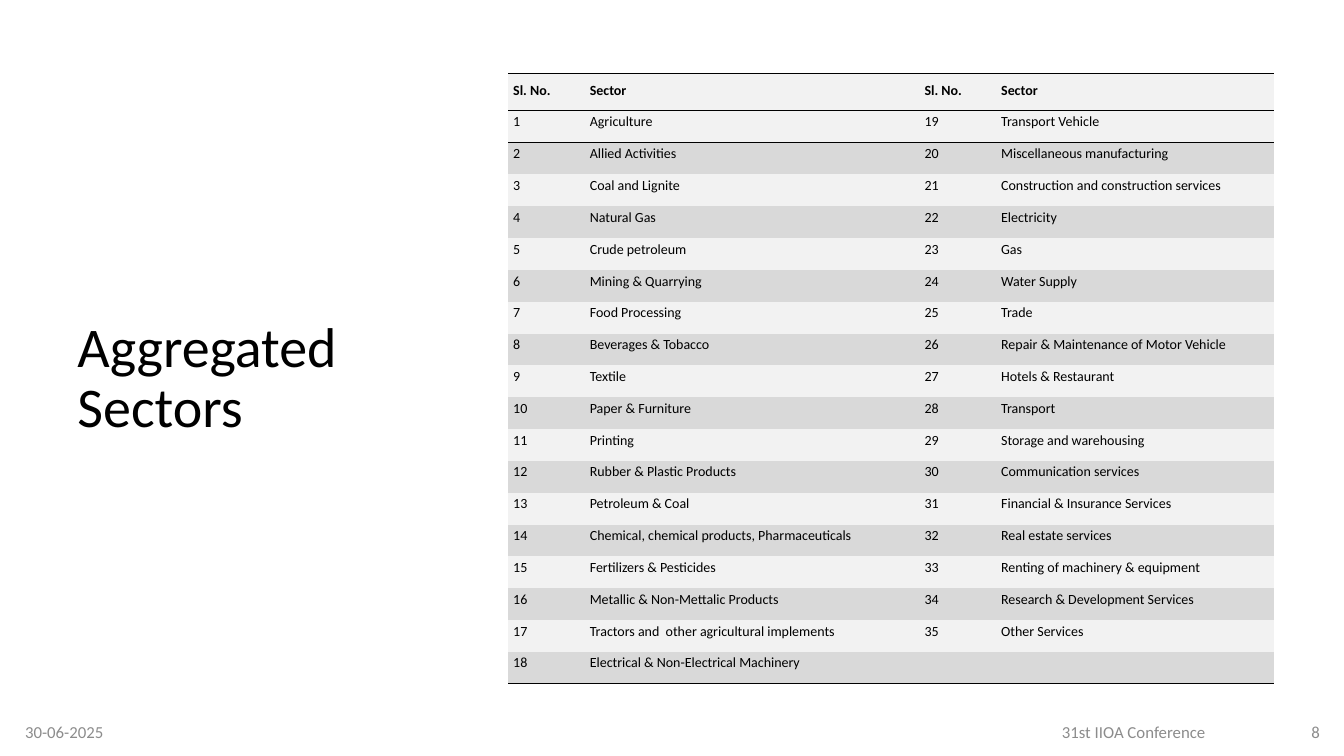
import pptx
import pptx.dml.color
import pptx.enum.text
import pptx.oxml
import pptx.oxml.ns
import pptx.util
from pptx.util import Inches

BLACK = pptx.dml.color.RGBColor(0x00, 0x00, 0x00)
FOOTER_GREY = pptx.dml.color.RGBColor(0x8C, 0x8C, 0x8C)
LIGHT_BAND = pptx.dml.color.RGBColor(0xF2, 0xF2, 0xF2)
DARK_BAND = pptx.dml.color.RGBColor(0xD9, 0xD9, 0xD9)

FONT = "Calibri"
PLAIN_TABLE_STYLE = "{2D5ABB26-0587-4C30-8999-92F81FD0307C}"
ALIGN = pptx.enum.text.PP_ALIGN
ANCHOR = pptx.enum.text.MSO_ANCHOR

COLUMN_WIDTHS = (0.76, 3.32, 0.76, 2.76)
HEADER_HEIGHT = 0.37
TABLE_HEIGHT = 6.06
TABLE_FONT_SIZE = 10

SECTORS = [
    "Agriculture",
    "Allied Activities",
    "Coal and Lignite",
    "Natural Gas",
    "Crude petroleum",
    "Mining & Quarrying",
    "Food Processing",
    "Beverages & Tobacco",
    "Textile",
    "Paper & Furniture",
    "Printing",
    "Rubber & Plastic Products",
    "Petroleum & Coal",
    "Chemical, chemical products, Pharmaceuticals",
    "Fertilizers & Pesticides",
    "Metallic & Non-Mettalic Products",
    "Tractors and  other agricultural implements",
    "Electrical & Non-Electrical Machinery",
    "Transport Vehicle",
    "Miscellaneous manufacturing",
    "Construction and construction services",
    "Electricity",
    "Gas",
    "Water Supply",
    "Trade",
    "Repair & Maintenance of Motor Vehicle",
    "Hotels & Restaurant",
    "Transport",
    "Storage and warehousing",
    "Communication services",
    "Financial & Insurance Services",
    "Real estate services",
    "Renting of machinery & equipment",
    "Research & Development Services",
    "Other Services",
]


def style_font(font, size, color, bold=False):
    font.name = FONT
    font.size = pptx.util.Pt(size)
    font.color.rgb = color
    font.bold = bold


def add_text(slide, text, left, top, width, height, size, color, align=ALIGN.LEFT):
    """Add a vertically centred text box and return its paragraph."""
    box = slide.shapes.add_textbox(
        Inches(left), Inches(top), Inches(width), Inches(height))
    frame = box.text_frame
    frame.word_wrap = True
    frame.vertical_anchor = ANCHOR.MIDDLE
    paragraph = frame.paragraphs[0]
    paragraph.text = text
    paragraph.alignment = align
    style_font(paragraph.font, size, color)
    return paragraph


def add_footer(slide, text, left, width, align):
    paragraph = add_text(slide, text, left, 7.06, width, 0.4, 12, FOOTER_GREY, align)
    paragraph.space_after = pptx.util.Pt(6)


def add_border(cell, side):
    """Rule one side of a cell: "T" for top or "B" for bottom, before its fill."""
    cell._tc.get_or_add_tcPr().append(pptx.oxml.parse_xml(
        f'<a:ln{side} {pptx.oxml.ns.nsdecls("a")} w="{pptx.util.Pt(1)}">'
        f'<a:solidFill><a:srgbClr val="{BLACK}"/></a:solidFill></a:ln{side}>'))


def fill_cell(cell, text, band, bold, borders):
    for side in borders:
        add_border(cell, side)
    cell.fill.solid()
    cell.fill.fore_color.rgb = band
    cell.vertical_anchor = ANCHOR.BOTTOM
    cell.margin_left = Inches(0.05)
    cell.margin_top = Inches(0.02)
    cell.margin_right = Inches(0.01)
    cell.margin_bottom = Inches(0.12)
    paragraph = cell.text_frame.paragraphs[0]
    style_font(paragraph.font, TABLE_FONT_SIZE, BLACK, bold)
    if text:
        paragraph.text = text
    else:
        # An empty cell takes its line height from the end mark.
        end_mark = paragraph._p.get_or_add_endParaRPr()
        end_mark.set("sz", str(TABLE_FONT_SIZE * 100))


def sector_rows():
    """Number the sectors and lay them out in two halves, side by side."""
    numbered = [(str(number), name) for number, name in enumerate(SECTORS, 1)]
    half = (len(numbered) + 1) // 2
    right = numbered[half:] + [("", "")] * (2 * half - len(numbered))
    return [first + second for first, second in zip(numbered[:half], right)]


def add_sector_table(slide):
    rows = [("Sl. No.", "Sector") * 2] + sector_rows()
    last = len(rows) - 1
    table = slide.shapes.add_table(
        len(rows), len(COLUMN_WIDTHS), Inches(5.04), Inches(0.73),
        Inches(sum(COLUMN_WIDTHS)), Inches(TABLE_HEIGHT)).table
    table.first_row = False
    table.horz_banding = False
    table._tbl.tblPr[0].text = PLAIN_TABLE_STYLE
    for column, width in zip(table.columns, COLUMN_WIDTHS):
        column.width = Inches(width)

    row_height = (TABLE_HEIGHT - HEADER_HEIGHT) / last
    borders = {0: "TB", 1: "T", last: "B"}
    for index, values in enumerate(rows):
        is_header = index == 0
        table.rows[index].height = Inches(HEADER_HEIGHT if is_header else row_height)
        band = LIGHT_BAND if is_header or index % 2 else DARK_BAND
        for cell, text in zip(table.rows[index].cells, values):
            fill_cell(cell, text, band, is_header, borders.get(index, ""))


def main():
    presentation = pptx.Presentation()
    presentation.slide_width = Inches(13.33)
    presentation.slide_height = Inches(7.5)
    slide = presentation.slides.add_slide(presentation.slide_layouts[6])

    title = add_text(slide, "Aggregated Sectors", 0.67, 0.6, 3.82, 6.33, 40, BLACK)
    title.line_spacing = 0.9
    add_footer(slide, "30-06-2025", 0.15, 3.82, ALIGN.LEFT)
    add_footer(slide, "31st IIOA Conference", 9.71, 3.07, ALIGN.CENTER)
    add_footer(slide, "8", 12.72, 0.47, ALIGN.RIGHT)
    add_sector_table(slide)

    presentation.save("out.pptx")


if __name__ == "__main__":
    main()
